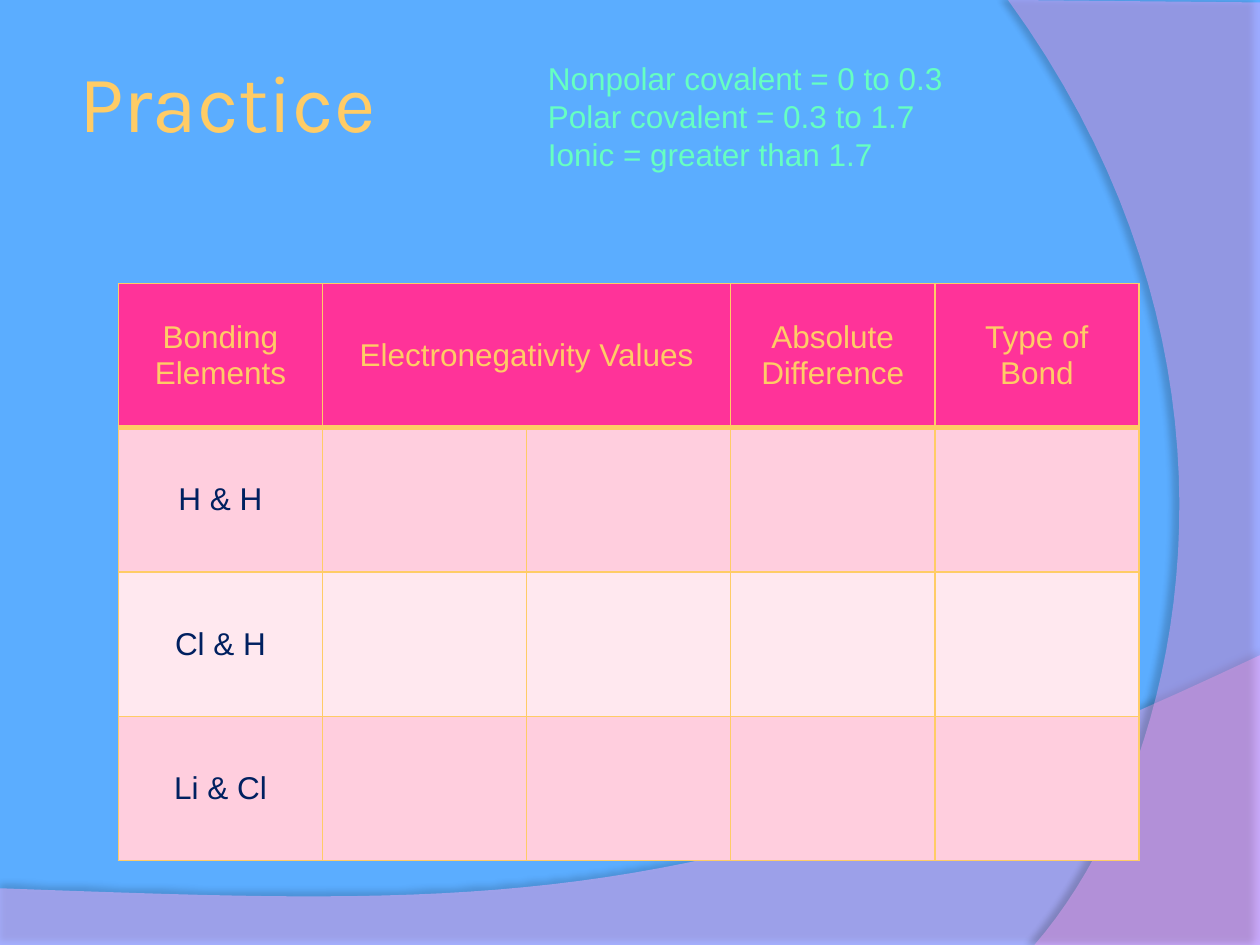
from lxml import etree
from pptx import Presentation
from pptx.dml.color import RGBColor
from pptx.enum.text import MSO_ANCHOR, PP_ALIGN
from pptx.oxml.ns import qn
from pptx.util import Inches, Pt

MIDDLE = MSO_ANCHOR.MIDDLE
LEFT, CENTER = PP_ALIGN.LEFT, PP_ALIGN.CENTER

COLORS = {
    "background": "5BADFF",
    "lower_wave": "FFB4FF",
    "right_wave": "FFA7FF",
    "gold": "FFCC66",
    "mint": "66FFC2",
    "navy": "002060",
    "header": "FF3399",
    "band_dark": "FFCEDE",
    "band_light": "FFE8EF",
    "shadow": "000000",
}
HEADINGS = {0: "Bonding Elements", 1: "Electronegativity Values",
            3: "Absolute Difference", 4: "Type of Bond"}
PAIRS = ["H & H", "Cl & H", "Li & Cl"]
RULES = ["Nonpolar covalent = 0 to 0.3", "Polar covalent = 0.3 to 1.7",
         "Ionic = greater than 1.7"]


def rgb(name):
    return RGBColor.from_string(COLORS[name])


def add_span(para, text, size, font, color, align=LEFT):
    para.alignment = align
    span = para.add_run()
    span.text = text
    span.font.size = Pt(size)
    span.font.name = font
    span.font.color.rgb = rgb(color)


def curve(start, control_1, control_2, end, steps=40):
    """Points along a cubic curve, without its start."""
    points = []
    for step in range(1, steps + 1):
        t = step / steps
        weights = ((1 - t) ** 3, 3 * t * (1 - t) ** 2, 3 * t * t * (1 - t), t ** 3)
        corners = (start, control_1, control_2, end)
        points.append(tuple(sum(w * corner[axis] for w, corner in zip(weights, corners))
                            for axis in (0, 1)))
    return points


def add_color(parent, name, alpha):
    color = etree.SubElement(parent, qn("a:srgbClr"), val=COLORS[name])
    etree.SubElement(color, qn("a:alpha"), val=str(alpha * 1000))


def add_wave(page, points, color, alpha, shadow_alpha, distance, direction):
    emu = [(Inches(x), Inches(y)) for x, y in points]
    builder = page.shapes.build_freeform(*emu[0])
    builder.add_line_segments(emu[1:], close=True)
    wave = builder.convert_to_shape()
    wave.fill.solid()
    wave.fill.fore_color.rgb = rgb(color)
    wave.line.fill.background()
    wave.shadow.inherit = False

    # Transparency and soft edge shadow
    properties = wave.element.spPr
    fill = properties.find(qn("a:solidFill"))
    fill.remove(fill[0])
    add_color(fill, color, alpha)
    shadow = etree.SubElement(
        properties.find(qn("a:effectLst")), qn("a:outerShdw"),
        blurRad=str(Pt(4)), dist=str(Pt(distance)),
        dir=str(direction * 60000), rotWithShape="0")
    add_color(shadow, "shadow", shadow_alpha)


def add_title(page, text):
    title = page.shapes.title
    title.left, title.top = Inches(0.58), Inches(0.17)
    title.width, title.height = Inches(8.5), Inches(1.25)
    frame = title.text_frame
    frame.vertical_anchor = MIDDLE
    frame.margin_left = frame.margin_right = Inches(0.05)
    add_span(frame.paragraphs[0], text, 46, "Karla", "gold")
    # Bring the title in front of the waves
    title.element.getparent().append(title.element)


def set_borders(cell, bottom):
    properties = cell._tc.get_or_add_tcPr()
    widths = {"L": 1, "R": 1, "T": 1, "B": bottom}
    for index, (side, width) in enumerate(widths.items()):
        line = etree.Element(qn(f"a:ln{side}"), w=str(Pt(width)))
        fill = etree.SubElement(line, qn("a:solidFill"))
        etree.SubElement(fill, qn("a:srgbClr"), val=COLORS["gold"])
        properties.insert(index, line)


def add_bond_table(page):
    rows, columns = len(PAIRS) + 1, 5
    frame = page.shapes.add_table(rows, columns, Inches(0.94), Inches(2.25),
                                  Inches(8.1), Inches(4.58))
    table = frame.table
    table.first_row = table.horz_banding = False
    texts = {(0, column): text for column, text in HEADINGS.items()}
    texts.update({(row, 0): pair for row, pair in enumerate(PAIRS, 1)})
    for row in range(rows):
        band = "header" if row == 0 else "band_dark" if row % 2 else "band_light"
        for column in range(columns):
            cell = table.cell(row, column)
            cell.fill.solid()
            cell.fill.fore_color.rgb = rgb(band)
            cell.vertical_anchor = MIDDLE
            set_borders(cell, 1 if row else 3)
            if (row, column) in texts:
                add_span(cell.text_frame.paragraphs[0], texts[row, column], 18,
                         "Arial", "navy" if row else "gold", CENTER)
    table.cell(0, 1).merge(table.cell(0, 2))


def add_rules(page):
    box = page.shapes.add_textbox(Inches(4.25), Inches(0.42), Inches(5.42), Inches(1.31))
    frame = box.text_frame
    frame.word_wrap = True
    for index, rule in enumerate(RULES):
        para = frame.add_paragraph() if index else frame.paragraphs[0]
        add_span(para, rule, 18, "Arial", "mint")


def main():
    deck = Presentation()
    deck.slide_width, deck.slide_height = Inches(10), Inches(7.5)
    page = deck.slides.add_slide(deck.slide_layouts[5])
    page.background.fill.solid()
    page.background.fill.fore_color.rgb = rgb("background")

    # Background waves
    lower = [(0, 7.05), (0, 7.51), (10, 7.51), (10, 5.2)]
    lower += curve((10, 5.2), (5.59, 7.29), (3.91, 7.19), (0, 7.05))
    add_wave(page, lower, "lower_wave", 45, 35, 3.5, 270)
    right = [(10, 0.02), (10, 7.5), (8.21, 7.5)]
    right += curve((8.21, 7.5), (9.35, 6.19), (10.18, 3), (8, 0))
    add_wave(page, right, "right_wave", 40, 45, 4, 180)

    # Content
    add_title(page, "Practice")
    add_bond_table(page)
    add_rules(page)
    deck.save("out.pptx")


if __name__ == "__main__":
    main()
